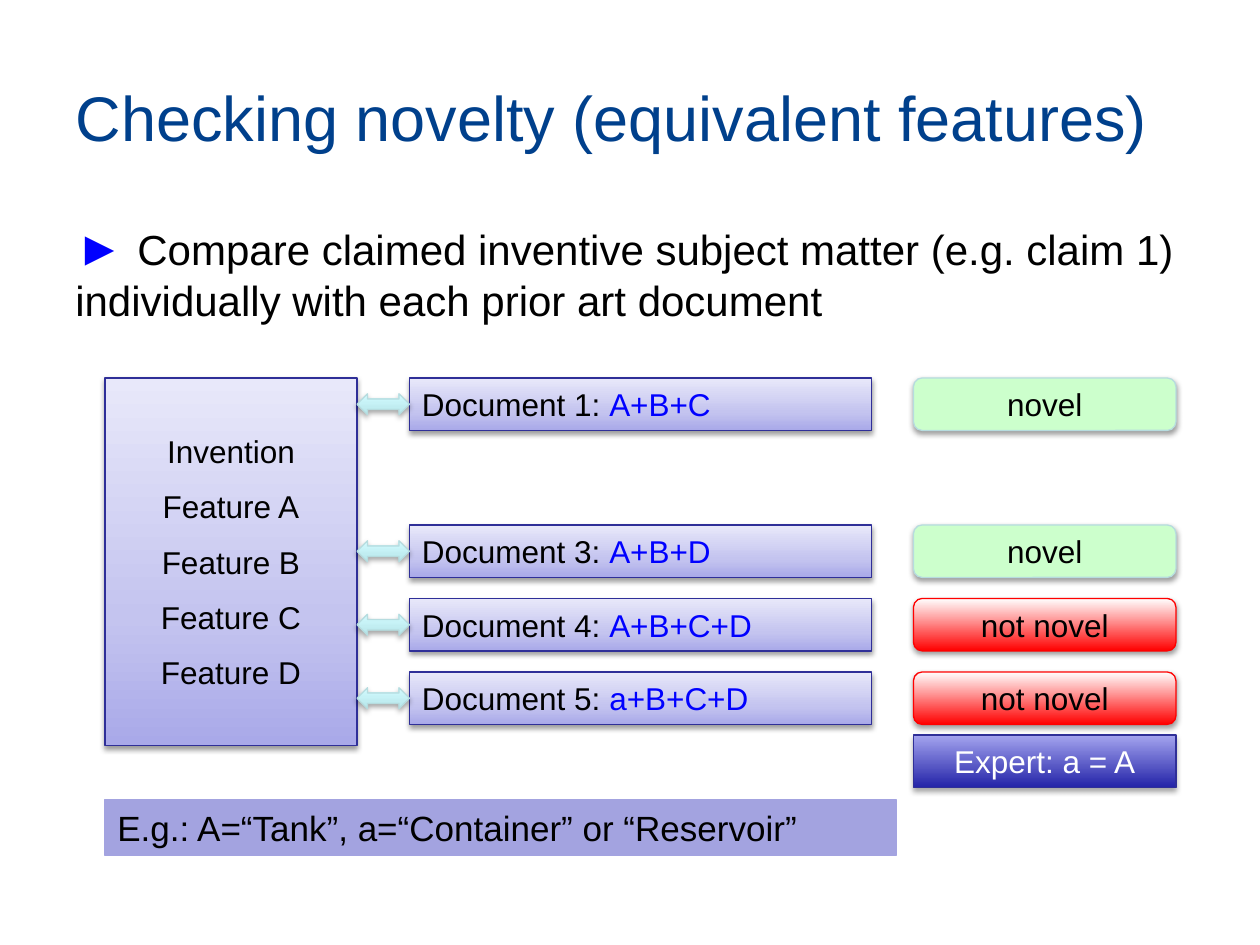
"""Builds a slide that compares an invention with prior art documents to check novelty."""
from lxml.etree import SubElement
from pptx import Presentation
from pptx.dml.color import RGBColor
from pptx.enum.shapes import MSO_SHAPE
from pptx.enum.text import MSO_ANCHOR, PP_ALIGN
from pptx.oxml.ns import qn
from pptx.util import Pt

NAVY = RGBColor(0x00, 0x40, 0x8C)
BLUE = RGBColor(0x00, 0x00, 0xFF)
BLACK = RGBColor(0x00, 0x00, 0x00)
WHITE = RGBColor(0xFF, 0xFF, 0xFF)
INDIGO = RGBColor(0x2F, 0x2F, 0x98)
LAVENDER = RGBColor(0xA3, 0xA3, 0xE0)
MINT = RGBColor(0xCC, 0xFF, 0xCC)
TEAL = RGBColor(0xB6, 0xDC, 0xDF)
RED = RGBColor(0xFF, 0x00, 0x00)

LAVENDER_FADE = [(0, "A9A9E9"), (35, "C4C4EF"), (100, "E8E8FA")]
RED_FADE = [(0, "FF0000"), (100, "FFFFFF")]
TEAL_FADE = [(0, "B5E5E9"), (100, "D3FBFF")]
INDIGO_FADE = [(0, "2424A8"), (100, "A4A4EF")]

TITLE = "Checking novelty (equivalent features)"
TASK = [("► ", 28, BLUE),
        ("Compare claimed inventive subject matter (e.g. claim 1) "
         "individually with each prior art document", 24, BLACK)]
INVENTION = ["Invention", "Feature A", "Feature B", "Feature C", "Feature D"]
DOCUMENTS = [
    (0, "Document 1: ", "A+B+C", "novel"),
    (2, "Document 3: ", "A+B+D", "novel"),
    (3, "Document 4: ", "A+B+C+D", "not novel"),
    (4, "Document 5: ", "a+B+C+D", "not novel"),
]
VERDICT_STYLES = {"novel": (MINT, TEAL), "not novel": (RED_FADE, RED)}
EXPERT = "Expert: a = A"
EXAMPLE = "E.g.: A=“Tank”, a=“Container” or “Reservoir”"

TOP, PITCH, ROW_HEIGHT = 216, 42, 30
INVENTION_LEFT, INVENTION_WIDTH = 60, 144
ARROW_LEFT, ARROW_WIDTH, ARROW_HEIGHT = 204, 30, 12
DOCUMENT_LEFT, DOCUMENT_WIDTH = 234, 264
VERDICT_LEFT, VERDICT_WIDTH = 522, 150


def add_run(paragraph, text, size, color):
    run = paragraph.add_run()
    run.text = text
    run.font.name = "Arial"
    run.font.size = Pt(size)
    run.font.color.rgb = color


def fade(shape, stops):
    shape.fill.gradient()
    shape.fill.gradient_angle = 90
    stop_list = shape._element.spPr.find(".//" + qn("a:gsLst"))
    for stop in list(stop_list):
        stop_list.remove(stop)
    for position, color in stops:
        stop = SubElement(stop_list, qn("a:gs"), pos=str(position * 1000))
        SubElement(stop, qn("a:srgbClr"), val=color)


def cast_shadow(shape, opacity, distance):
    effects = shape._element.spPr.find(qn("a:effectLst"))
    shadow = SubElement(effects, qn("a:outerShdw"), blurRad=str(Pt(3.1)),
                        dist=str(Pt(distance)), dir="5400000", rotWithShape="0")
    color = SubElement(shadow, qn("a:srgbClr"), val="000000")
    SubElement(color, qn("a:alpha"), val=str(opacity * 1000))


def add_block(shapes, kind, box, fill, line, shadow=(38, 1.6)):
    block = shapes.add_shape(kind, *(Pt(length) for length in box))
    if isinstance(fill, list):
        fade(block, fill)
    else:
        block.fill.solid()
        block.fill.fore_color.rgb = fill
    block.line.color.rgb = line
    block.line.width = Pt(0.75)
    block.shadow.inherit = False
    if shadow:
        cast_shadow(block, *shadow)
    return block


def write(block, lines, align=PP_ALIGN.CENTER, size=18):
    frame = block.text_frame
    frame.word_wrap = True
    frame.vertical_anchor = MSO_ANCHOR.MIDDLE
    for index, runs in enumerate(lines):
        paragraph = frame.add_paragraph() if index else frame.paragraphs[0]
        paragraph.alignment = align
        if index:
            paragraph.space_before = Pt(10)
        for text, color in runs:
            add_run(paragraph, text, size, color)


def add_heading(slide):
    title = slide.shapes.title
    title.left, title.top, title.width, title.height = Pt(36), Pt(21.6), Pt(648), Pt(90)
    title.text_frame.vertical_anchor = MSO_ANCHOR.MIDDLE
    heading = title.text_frame.paragraphs[0]
    heading.alignment = PP_ALIGN.LEFT
    add_run(heading, TITLE, 36, NAVY)

    task = slide.shapes.add_textbox(Pt(36), Pt(120), Pt(648), Pt(72))
    task.text_frame.word_wrap = True
    for text, size, color in TASK:
        add_run(task.text_frame.paragraphs[0], text, size, color)


def add_comparison(slide):
    last_slot = DOCUMENTS[-1][0]
    invention = add_block(
        slide.shapes, MSO_SHAPE.RECTANGLE,
        (INVENTION_LEFT, TOP, INVENTION_WIDTH, (last_slot + 1) * PITCH),
        LAVENDER_FADE, INDIGO)
    write(invention, [[(line, BLACK)] for line in INVENTION])

    for slot, label, features, result in DOCUMENTS:
        top = TOP + slot * PITCH
        pair = slide.shapes.add_group_shape().shapes
        document = add_block(pair, MSO_SHAPE.RECTANGLE,
                             (DOCUMENT_LEFT, top, DOCUMENT_WIDTH, ROW_HEIGHT),
                             LAVENDER_FADE, INDIGO)
        write(document, [[(label, BLACK), (features, BLUE)]], PP_ALIGN.LEFT)
        add_block(pair, MSO_SHAPE.LEFT_RIGHT_ARROW,
                  (ARROW_LEFT, top + (ROW_HEIGHT - ARROW_HEIGHT) / 2,
                   ARROW_WIDTH, ARROW_HEIGHT), TEAL_FADE, TEAL, (35, 1.8))
        verdict = add_block(slide.shapes, MSO_SHAPE.ROUNDED_RECTANGLE,
                            (VERDICT_LEFT, top, VERDICT_WIDTH, ROW_HEIGHT),
                            *VERDICT_STYLES[result])
        write(verdict, [[(result, BLACK)]])


def add_notes_below(slide):
    expert = add_block(slide.shapes, MSO_SHAPE.RECTANGLE,
                       (VERDICT_LEFT, 420, VERDICT_WIDTH, ROW_HEIGHT),
                       INDIGO_FADE, INDIGO, (35, 1.8))
    write(expert, [[(EXPERT, WHITE)]])
    example = add_block(slide.shapes, MSO_SHAPE.RECTANGLE,
                        (INVENTION_LEFT, 457, 452, 32), LAVENDER, LAVENDER, None)
    write(example, [[(EXAMPLE, BLACK)]], PP_ALIGN.LEFT, 20)


def main():
    deck = Presentation()
    deck.slide_width, deck.slide_height = Pt(720), Pt(540)
    slide = deck.slides.add_slide(deck.slide_layouts[5])
    add_heading(slide)
    add_comparison(slide)
    add_notes_below(slide)
    deck.save("out.pptx")


if __name__ == "__main__":
    main()
